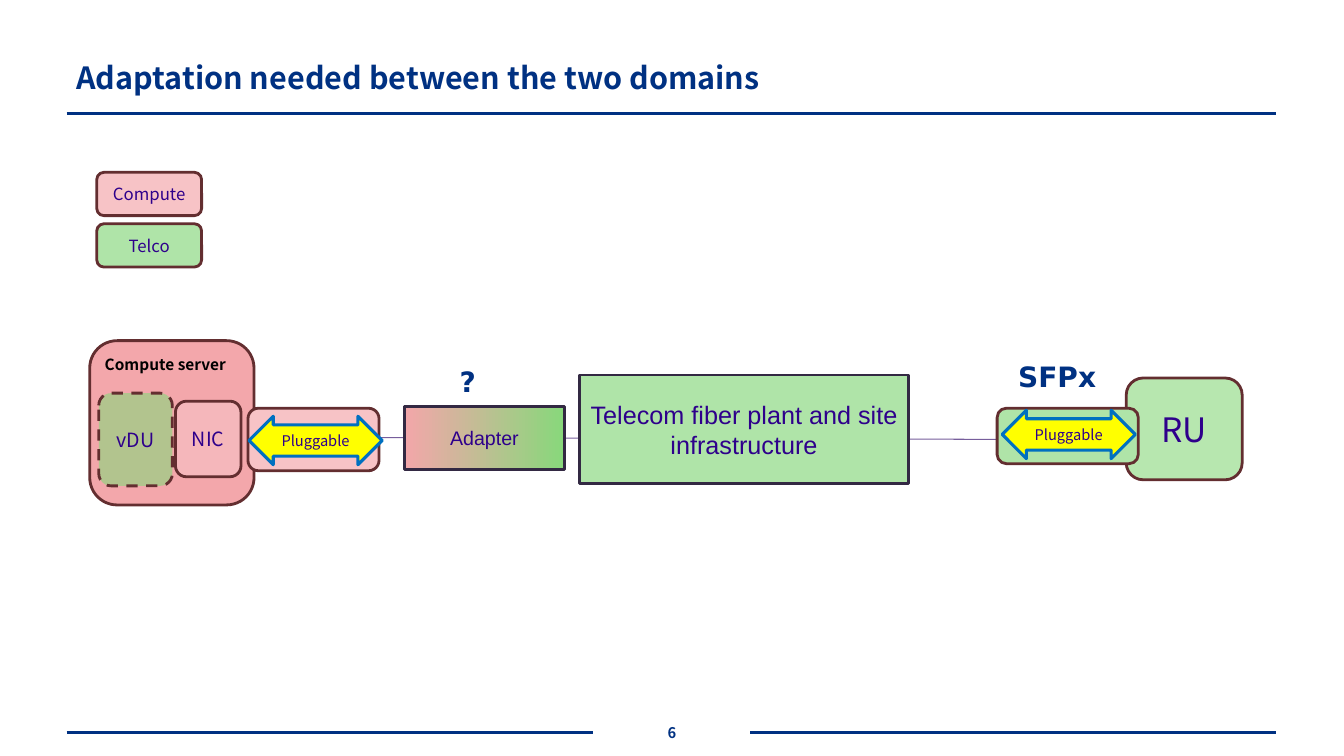
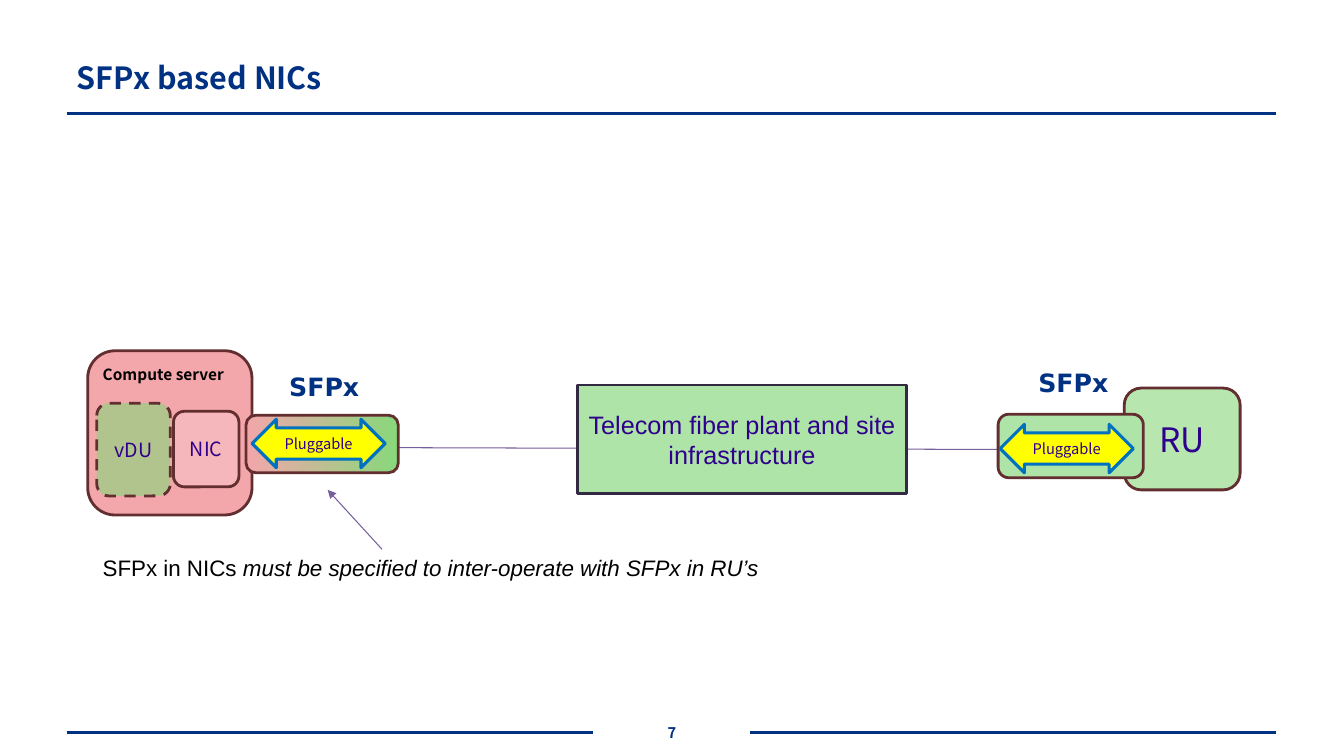
"""Build two slides on linking a compute server to a radio unit over telecom fiber."""
from lxml import etree
from pptx import Presentation
from pptx.dml.color import RGBColor
from pptx.enum.dml import MSO_LINE
from pptx.enum.shapes import MSO_CONNECTOR, MSO_SHAPE
from pptx.enum.text import MSO_ANCHOR, PP_ALIGN
from pptx.oxml.ns import qn
from pptx.util import Inches, Pt

NAVY = RGBColor(0x00, 0x31, 0x82)
INDIGO = RGBColor(0x2E, 0x00, 0x8B)
BLACK = RGBColor(0x00, 0x00, 0x00)
PURPLE = RGBColor(0x77, 0x5E, 0x9C)
MAROON = RGBColor(0x63, 0x2E, 0x30)
DARK = RGBColor(0x33, 0x29, 0x43)
RED = RGBColor(0xEC, 0x6D, 0x74)
PINK = RGBColor(0xF7, 0xC3, 0xC6)
GREEN = RGBColor(0x88, 0xD8, 0x7B)
MINT = RGBColor(0xAF, 0xE4, 0xA8)
YELLOW = RGBColor(0xFF, 0xFF, 0x00)
BLUE = RGBColor(0x00, 0x70, 0xC0)
PINK_TO_GREEN = [RGBColor(0xF3, 0xA6, 0xAA), GREEN]
SANS, ARIAL, DEJAVU = "Noto Sans CJK JP", "Arial", "DejaVu Sans"
ROUND, RECT = MSO_SHAPE.ROUNDED_RECTANGLE, MSO_SHAPE.RECTANGLE
ARROW = MSO_SHAPE.LEFT_RIGHT_ARROW


def add_box(s, kind, at, fill=None, line=MAROON, text="", size=12, font=SANS,
            color=INDIGO, bold=False, alpha=None, width=2):
    """Add a shape, or a text box when kind is None, with one line of text."""
    at = [Inches(v) for v in at]
    if kind is None:
        sp = s.shapes.add_textbox(*at)
    else:
        sp = s.shapes.add_shape(kind, *at)
        sp.shadow.inherit = False
        sp.line.color.rgb = line
        sp.line.width = Pt(width)
        if isinstance(fill, list):
            sp.fill.gradient()
            sp.fill.gradient_angle = 0
            for stop, rgb in zip(sp.fill.gradient_stops, fill):
                stop.color.rgb = rgb
        else:
            sp.fill.solid()
            sp.fill.fore_color.rgb = fill
        if alpha:
            clr = sp._element.spPr.find(qn("a:solidFill"))[0]
            etree.SubElement(clr, qn("a:alpha")).set("val", str(alpha * 1000))
    tf = sp.text_frame
    tf.word_wrap = True
    if text:
        p = tf.paragraphs[0]
        p.text = text
        if kind is not None:
            p.alignment = PP_ALIGN.CENTER
        r = p.runs[0]
        r.font.name, r.font.size, r.font.bold = font, Pt(size), bold
        r.font.color.rgb = color
    return sp


def add_line(s, start, end, color, width):
    """Add a straight line between two points."""
    ends = [Inches(v) for v in (*start, *end)]
    sp = s.shapes.add_connector(MSO_CONNECTOR.STRAIGHT, *ends)
    sp.line.color.rgb = color
    sp.line.width = Pt(width)
    etree.SubElement(sp._element.spPr, qn("a:effectLst"))
    return sp


SLIDES = [
    dict(title="Adaptation needed between the two domains", number="6", dx=0, dy=0,
         plugs=[((2.46, 4.05, 1.3, 0.62), PINK), ((9.89, 4.05, 1.4, 0.55), MINT)],
         arrows=[(2.47, 4.13), (9.94, 4.07)],
         labels=[("?", 4.38, 3.6), ("SFPx", 9.92, 3.56)], label_size=20),
    dict(title="SFPx based NICs", number="7", dx=-0.02, dy=0.1,
         plugs=[((2.44, 4.12, 1.51, 0.57), PINK_TO_GREEN), ((9.9, 4.11, 1.44, 0.63), MINT)],
         arrows=[(2.5, 4.16), (9.92, 4.21)],
         labels=[("SFPx", 2.69, 3.67), ("SFPx", 10.12, 3.63)], label_size=18),
]

prs = Presentation()
prs.slide_width, prs.slide_height = Inches(13.33), Inches(7.5)

for d in SLIDES:
    s = prs.slides.add_slide(prs.slide_layouts[6])
    dx, dy = d["dx"], d["dy"]

    for left, right, y in [(0.66, 12.66, 1.13), (0.66, 5.88, 7.27), (7.44, 12.66, 7.27)]:
        add_line(s, (left, y), (right, y), NAVY, 2)
    title = add_box(s, None, (0.66, 0.5, 12, 0.57), text=d["title"], size=21.8,
                    color=NAVY, bold=True)
    title.text_frame.paragraphs[0].line_spacing = 0.9
    number = add_box(s, None, (5.73, 7.07, 1.87, 0.4), text=d["number"], size=10.5,
                     color=NAVY, bold=True)
    number.text_frame.paragraphs[0].alignment = PP_ALIGN.CENTER
    for sp in (title, number):
        sp.text_frame.vertical_anchor = MSO_ANCHOR.MIDDLE

    add_line(s, (3.52 + dx, 4.34 + dy), (10.25 + dx, 4.36 + dy), PURPLE, 0.75)
    add_box(s, ROUND, (0.89 + dx, 3.38 + dy, 1.63, 1.63), RED, alpha=60)
    add_box(s, None, (0.94 + dx, 3.47 + dy, 1.61, 0.29), text="Compute server",
            size=11, color=BLACK, bold=True)
    vdu = add_box(s, ROUND, (0.98 + dx, 3.9 + dy, 0.73, 0.92), GREEN,
                  text="vDU", size=14, alpha=60)
    vdu.line.dash_style = MSO_LINE.DASH
    add_box(s, ROUND, (1.74 + dx, 3.98 + dy, 0.65, 0.75), PINK, text="NIC", size=14, alpha=60)
    add_box(s, ROUND, (11.17 + dx, 3.75 + dy, 1.15, 1.01), GREEN, text="RU", size=24, alpha=60)
    add_box(s, RECT, (5.75 + dx, 3.72 + dy, 3.26, 1.08), MINT, DARK,
            "Telecom fiber plant and site infrastructure", 18, ARIAL)

    for at, fill in d["plugs"]:
        add_box(s, ROUND, at, fill)
    for x, y in d["arrows"]:
        arrow = add_box(s, ARROW, (x, y, 1.32, 0.48), YELLOW, BLUE, "Pluggable", 10.5, width=2.25)
        arrow.adjustments[0], arrow.adjustments[1] = 0.647, 0.5
    for text, x, y in d["labels"]:
        label = add_box(s, None, (x, y, 1.24, 0.57), text=text, size=d["label_size"],
                        font=DEJAVU, color=NAVY, bold=True)
        p = label.text_frame.paragraphs[0]
        p.line_spacing = 0.9
        p._p.get_or_add_pPr().set("marL", str(Inches(0.08)))

adaptation, nics = prs.slides

add_box(adaptation, RECT, (4.01, 4.03, 1.59, 0.63), PINK_TO_GREEN, DARK, "Adapter", 14, ARIAL)
for i, (text, fill) in enumerate([("Compute", PINK), ("Telco", MINT)]):
    add_box(adaptation, ROUND, (0.96, 1.71 + i * 0.51, 1.04, 0.43), fill, text=text)

note = add_box(nics, None, (0.92, 5.45, 8.44, 0.37), text="SFPx in NICs ",
               size=16, font=ARIAL, color=BLACK)
r = note.text_frame.paragraphs[0].add_run()
r.text = "must be specified to inter-operate with SFPx in RU’s"
r.font.name, r.font.size, r.font.italic = ARIAL, Pt(16), True
r.font.color.rgb = BLACK
pointer = add_line(nics, (3.79, 5.45), (3.25, 4.86), PURPLE, 0.75)
etree.SubElement(pointer.line._get_or_add_ln(), qn("a:tailEnd")).set("type", "triangle")

prs.save("out.pptx")
